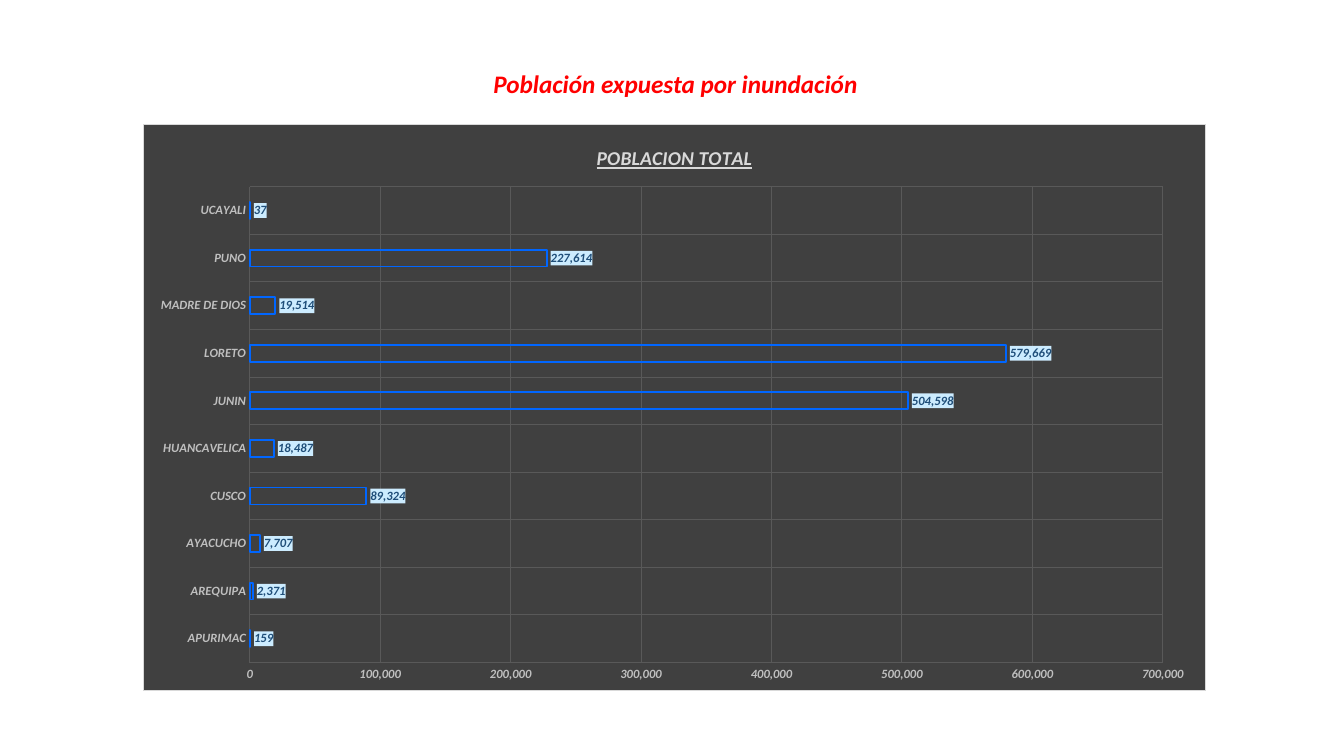
from dataclasses import dataclass
from typing import NamedTuple

from lxml import etree
from pptx import Presentation
from pptx import util as u
from pptx.chart.data import CategoryChartData
from pptx.dml.color import RGBColor
from pptx.enum import chart as ch, text
from pptx.oxml import parse_xml
from pptx.oxml.ns import nsdecls, qn

PX = 9144  # EMU per px, 100 px to the inch
FONT = "Calibri"
COLORS = {
    "heading": "FF0000",
    "panel": "404040",
    "border": "D9D9D9",
    "title": "D9D9D9",
    "axis": "BFBFBF",
    "grid": "595959",
    "bar": "0066FF",
    "label": "1F4E79",
    "label_fill": "CCECFF",
}


class Box(NamedTuple):
    left: int
    top: int
    width: int
    height: int

    def emu(self) -> list[int]:
        return [side * PX for side in self]


class Region(NamedTuple):
    name: str
    population: int


@dataclass
class TextStyle:
    size: int
    color: str
    underline: bool = False


REGIONS = [
    Region("APURIMAC", 159),
    Region("AREQUIPA", 2371),
    Region("AYACUCHO", 7707),
    Region("CUSCO", 89324),
    Region("HUANCAVELICA", 18487),
    Region("JUNIN", 504598),
    Region("LORETO", 579669),
    Region("MADRE DE DIOS", 19514),
    Region("PUNO", 227614),
    Region("UCAYALI", 37),
]
HEADING_BOX = Box(477, 63, 386, 40)
CHART_BOX = Box(142, 123, 1054, 563)
PLOT_LAYOUT = {"x": 0.1, "y": 0.11, "w": 0.86, "h": 0.84}


def rgb(name: str) -> RGBColor:
    return RGBColor.from_string(COLORS[name])


def style_font(font, style: TextStyle) -> None:
    font.name = FONT
    font.size = u.Pt(style.size)
    font.bold = font.italic = True
    if style.underline:
        font.underline = True
    font.color.rgb = rgb(style.color)


def add_run(paragraph, words: str, style: TextStyle) -> None:
    run = paragraph.add_run()
    run.text = words
    style_font(run.font, style)


def fill_properties(fill: str, border: str = "") -> etree._Element:
    line = "<a:ln/>"
    if border:
        line = (f'<a:ln w="{u.Pt(0.75)}"><a:solidFill><a:srgbClr val="{COLORS[border]}"/>'
                "</a:solidFill></a:ln>")
    return parse_xml(
        f'<c:spPr {nsdecls("c", "a")}><a:solidFill><a:srgbClr val="{COLORS[fill]}"/>'
        f"</a:solidFill>{line if border else ''}</c:spPr>")


def style_axis(axis) -> None:
    axis.major_tick_mark = axis.minor_tick_mark = ch.XL_TICK_MARK.NONE
    axis.format.line.fill.background()
    axis.has_major_gridlines = True
    grid_line = axis.major_gridlines.format.line
    grid_line.color.rgb = rgb("grid")
    grid_line.width = u.Pt(0.75)
    style_font(axis.tick_labels.font, TextStyle(9, "axis"))


def place_plot(chart) -> None:
    plot_area = chart._chartSpace.chart.plotArea
    for old_layout in plot_area.findall(qn("c:layout")):
        plot_area.remove(old_layout)
    modes = '<c:xMode val="edge"/><c:yMode val="edge"/>'
    sizes = "".join(f'<c:{key} val="{value}"/>' for key, value in PLOT_LAYOUT.items())
    plot_area.insert(0, parse_xml(
        f'<c:layout {nsdecls("c")}><c:manualLayout><c:layoutTarget val="inner"/>'
        f"{modes}{sizes}</c:manualLayout></c:layout>"))


def add_heading(slide) -> None:
    shape = slide.shapes.add_textbox(*HEADING_BOX.emu())
    frame = shape.text_frame
    frame.word_wrap = False
    frame.auto_size = text.MSO_AUTO_SIZE.SHAPE_TO_FIT_TEXT
    paragraph = frame.paragraphs[0]
    paragraph.alignment = text.PP_ALIGN.CENTER
    add_run(paragraph, "Población expuesta por inundación", TextStyle(18, "heading"))


def add_population_chart(slide) -> None:
    data = CategoryChartData(number_format="#,##0")
    data.categories = [region.name for region in REGIONS]
    data.add_series("POBLACION TOTAL", [region.population for region in REGIONS])
    chart = slide.shapes.add_chart(
        ch.XL_CHART_TYPE.BAR_CLUSTERED, *CHART_BOX.emu(), data).chart
    chart.has_legend = False
    chart.font.name = FONT
    chart.font.size = u.Pt(10)
    chart._chartSpace.chart.addnext(fill_properties("panel", "border"))

    # Title
    chart.has_title = True
    chart.chart_title.include_in_layout = False
    title = chart.chart_title.text_frame.paragraphs[0]
    add_run(title, "POBLACION TOTAL", TextStyle(14, "title", underline=True))

    # Axes
    for axis in (chart.category_axis, chart.value_axis):
        style_axis(axis)
    chart.value_axis.minimum_scale = 0
    chart.value_axis.maximum_scale = 700000
    chart.value_axis.major_unit = 100000
    chart.value_axis.tick_labels.number_format = "#,##0"
    chart.value_axis.tick_labels.number_format_is_linked = False
    place_plot(chart)

    # Bars
    plot = chart.plots[0]
    plot.gap_width = 182
    plot.overlap = -50
    plot.vary_by_categories = False
    bars = plot.series[0]
    bars.invert_if_negative = False
    bars.format.fill.background()
    bars.format.line.color.rgb = rgb("bar")
    bars.format.line.width = u.Pt(1.25)

    # Value labels
    labels = bars.data_labels
    labels.show_value = True
    labels.position = ch.XL_LABEL_POSITION.OUTSIDE_END
    labels.number_format = "#,##0"
    labels.number_format_is_linked = False
    style_font(labels.font, TextStyle(9, "label"))
    labels._element.find(qn("c:txPr")).addprevious(fill_properties("label_fill"))


def main() -> None:
    presentation = Presentation()
    presentation.slide_width = 1333 * PX
    presentation.slide_height = 750 * PX
    slide = presentation.slides.add_slide(presentation.slide_layouts[6])
    add_heading(slide)
    add_population_chart(slide)
    presentation.save("out.pptx")


if __name__ == "__main__":
    main()
